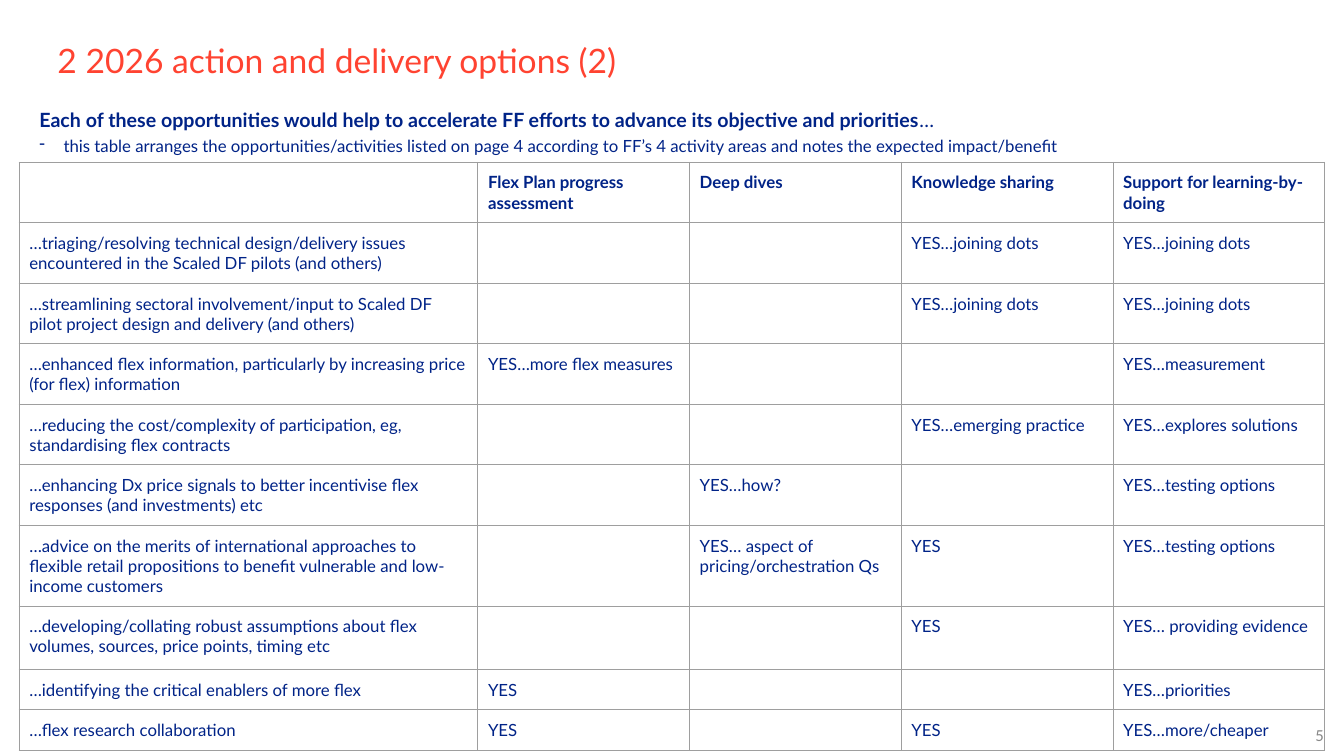
from lxml.etree import SubElement
from pptx import Presentation
from pptx.dml.color import RGBColor
from pptx.enum.text import MSO_ANCHOR, PP_ALIGN
from pptx.oxml.ns import qn
from pptx.util import Inches, Pt

COLORS = {"navy": "002387", "red": "FF4331", "grey": "888888", "border": "9E9E9E"}
COLUMN_WIDTHS = [4.55] + [2.1] * 4
ROW_HEIGHTS = [0.45, 0.55] + [0.56] * 4 + [0.75, 0.63, 0.37, 0.37]
OPPORTUNITIES = [
    ["", "Flex Plan progress assessment", "Deep dives", "Knowledge sharing",
     "Support for learning-by-doing"],
    ["…triaging/resolving technical design/delivery issues encountered in the Scaled DF pilots "
     "(and others)", "", "", "YES…joining dots", "YES…joining dots"],
    ["…streamlining sectoral involvement/input to Scaled DF pilot project design and delivery "
     "(and others)", "", "", "YES…joining dots", "YES…joining dots"],
    ["…enhanced flex information, particularly by increasing price (for flex) information",
     "YES…more flex measures", "", "", "YES…measurement"],
    ["…reducing the cost/complexity of participation, eg, standardising flex contracts",
     "", "", "YES…emerging practice", "YES…explores solutions"],
    ["…enhancing Dx price signals to better incentivise flex responses (and investments) etc",
     "", "YES…how?", "", "YES…testing options"],
    ["…advice on the merits of international approaches to flexible retail propositions to "
     "benefit vulnerable and low-income customers",
     "", "YES… aspect of pricing/orchestration Qs", "YES", "YES…testing options"],
    ["…developing/collating robust assumptions about flex volumes, sources, price points, "
     "timing etc", "", "", "YES", "YES… providing evidence"],
    ["…identifying the critical enablers of more flex", "YES", "", "", "YES…priorities"],
    ["…flex research collaboration", "YES", "", "YES", "YES…more/cheaper"],
]


class SlideBuilder:
    def __init__(self, slide, font="Lato", color="navy"):
        self.slide = slide
        self.font = font
        self.color = color

    def add_run(self, paragraph, text, size=12, bold=False, color=None, font=None):
        run = paragraph.add_run()
        run.text = text
        run.font.size = Pt(size)
        run.font.bold = bold
        run.font.name = font or self.font
        run.font.color.rgb = RGBColor.from_string(COLORS[color or self.color])

    def add_text_box(self, left, top, width, height, anchor=MSO_ANCHOR.TOP,
                     margin_left=0.1, margin_right=0.1):
        box = self.slide.shapes.add_textbox(
            Inches(left), Inches(top), Inches(width), Inches(height))
        frame = box.text_frame
        frame.word_wrap = True
        frame.vertical_anchor = anchor
        frame.margin_left = Inches(margin_left)
        frame.margin_right = Inches(margin_right)
        return frame

    def add_dash(self, paragraph, indent):
        properties = paragraph._p.get_or_add_pPr()
        properties.set("marL", str(Inches(indent)))
        properties.set("indent", str(-Inches(indent)))
        color = SubElement(properties, qn("a:buClr"))
        SubElement(color, qn("a:srgbClr"), val=COLORS[self.color])
        SubElement(properties, qn("a:buChar"), char="-")

    def style_cell(self, cell):
        cell.margin_left = cell.margin_right = Inches(0.1)
        cell.margin_top = cell.margin_bottom = Inches(0.1)
        properties = cell._tc.get_or_add_tcPr()
        for side in ("lnL", "lnR", "lnT", "lnB"):
            line = SubElement(properties, qn(f"a:{side}"), w=str(Pt(0.75)))
            fill = SubElement(line, qn("a:solidFill"))
            SubElement(fill, qn("a:srgbClr"), val=COLORS["border"])
        cell.fill.background()

    def add_table(self, left, top, rows, widths, heights):
        table = self.slide.shapes.add_table(
            len(rows), len(widths), Inches(left), Inches(top),
            Inches(sum(widths)), Inches(sum(heights))).table
        table.first_row = table.horz_banding = False
        for column, width in zip(table.columns, widths):
            column.width = Inches(width)
        for row, height in zip(table.rows, heights):
            row.height = Inches(height)
        for row_index, row in enumerate(rows):
            for column_index, text in enumerate(row):
                cell = table.cell(row_index, column_index)
                self.style_cell(cell)
                paragraph = cell.text_frame.paragraphs[0]
                if text:
                    self.add_run(paragraph, text, bold=row_index == 0)
                else:
                    SubElement(paragraph._p, qn("a:endParaRPr"), sz="1200")


def main():
    presentation = Presentation()
    presentation.slide_width = Inches(13.33)
    presentation.slide_height = Inches(7.5)
    slide = presentation.slides.add_slide(presentation.slide_layouts[6])
    builder = SlideBuilder(slide)

    page_number = builder.add_text_box(12.6, 7.09, 0.63, 0.4, MSO_ANCHOR.MIDDLE).paragraphs[0]
    page_number.alignment = PP_ALIGN.RIGHT
    builder.add_run(page_number, "5", color="grey", font="Calibri")

    title = builder.add_text_box(
        0.39, 0.23, 12.2, 0.79, MSO_ANCHOR.MIDDLE, margin_left=0.18).paragraphs[0]
    title.line_spacing = 0.9
    builder.add_run(title, "2 2026 action and delivery options (2)", 24, color="red")

    introduction = builder.add_text_box(
        0.39, 1.02, 12.83, 0.64, margin_left=0, margin_right=0.04)
    summary = introduction.paragraphs[0]
    builder.add_run(summary, "Each of these opportunities would help to accelerate FF efforts "
                    "to advance its objective and priorities", 14, bold=True)
    builder.add_run(summary, "…", 14)
    explanation = introduction.add_paragraph()
    explanation.space_before = Pt(3)
    builder.add_dash(explanation, 0.24)
    builder.add_run(explanation, "this table arranges the opportunities/activities listed on "
                    "page 4 according to FF’s 4 activity areas and notes the expected "
                    "impact/benefit")

    builder.add_table(0.19, 1.61, OPPORTUNITIES, COLUMN_WIDTHS, ROW_HEIGHTS)
    presentation.save("out.pptx")


if __name__ == "__main__":
    main()
